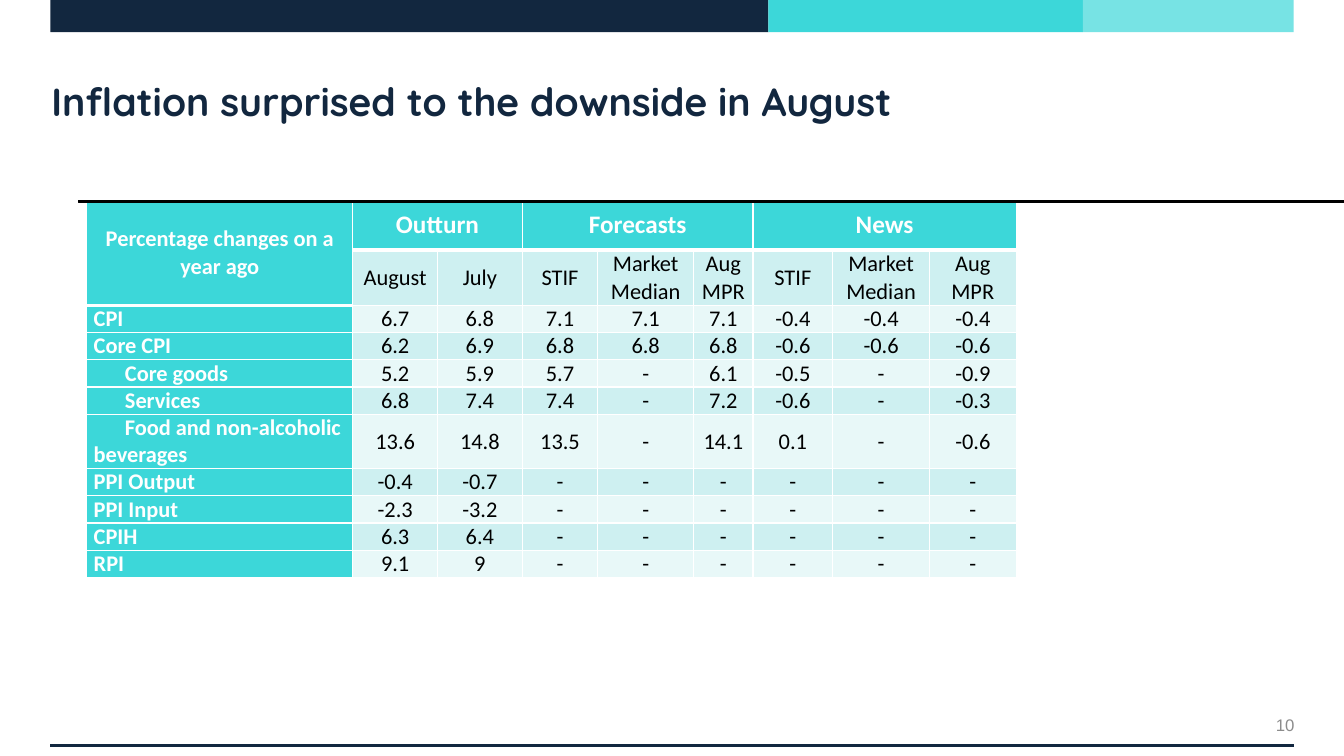
from lxml.etree import SubElement
from pptx import Presentation
from pptx.dml.color import RGBColor
from pptx.enum.shapes import MSO_CONNECTOR, MSO_SHAPE
from pptx.enum.text import MSO_ANCHOR, PP_ALIGN
from pptx.oxml import parse_xml
from pptx.oxml.ns import nsdecls, qn
from pptx.util import Inches, Pt

COLORS = {
    "navy": "12273F", "teal": "3CD7D9", "light_teal": "77E3E4",
    "band_dark": "CEF0F1", "band_light": "E8F8F8",
    "white": "FFFFFF", "black": "000000", "grey": "8C8C8C",
}
COLUMN_WIDTHS = [2.64, 0.84, 0.84, 0.75, 0.95, 0.59, 0.79, 0.96, 0.86]
GROUPS = [("Outturn", 1, 2), ("Forecasts", 3, 5), ("News", 6, 8)]
SUBHEADS = ["August", "July"] + ["STIF", "Market Median", "Aug MPR"] * 2
INDENTED = {"Core goods", "Services", "Food and non-alcoholic beverages"}
BOTTOM_ANCHORED = {"CPIH", "RPI"}
FIGURES = [
    ("CPI", "6.7 6.8 7.1 7.1 7.1 -0.4 -0.4 -0.4"),
    ("Core CPI", "6.2 6.9 6.8 6.8 6.8 -0.6 -0.6 -0.6"),
    ("Core goods", "5.2 5.9 5.7 - 6.1 -0.5 - -0.9"),
    ("Services", "6.8 7.4 7.4 - 7.2 -0.6 - -0.3"),
    ("Food and non-alcoholic beverages", "13.6 14.8 13.5 - 14.1 0.1 - -0.6"),
    ("PPI Output", "-0.4 -0.7 - - - - - -"),
    ("PPI Input", "-2.3 -3.2 - - - - - -"),
    ("CPIH", "6.3 6.4 - - - - - -"),
    ("RPI", "9.1 9 - - - - - -"),
]
ROW_HEIGHTS = [0.49, 0.55] + [0.54 if label.startswith("Food") else 0.27 for label, _ in FIGURES]


def rgb(name):
    return RGBColor.from_string(COLORS[name])


def add_run(paragraph, text, size, font, color, bold=False):
    run = paragraph.add_run()
    run.text = text
    run.font.size = Pt(size)
    run.font.name = font
    run.font.bold = bold
    run.font.color.rgb = rgb(color)


def add_bar(slide, left, top, width, height, color):
    bar = slide.shapes.add_shape(
        MSO_SHAPE.RECTANGLE, Inches(left), Inches(top), Inches(width), Inches(height))
    bar.shadow.inherit = False
    bar.fill.solid()
    bar.fill.fore_color.rgb = rgb(color)
    bar.line.fill.background()
    return bar


def add_text(slide, box, text, size, font, color, bold=False, align=PP_ALIGN.LEFT, margins=(0, 0, 0, 0)):
    text_box = slide.shapes.add_textbox(*map(Inches, box))
    frame = text_box.text_frame
    frame.word_wrap = True
    frame.vertical_anchor = MSO_ANCHOR.MIDDLE
    (frame.margin_left, frame.margin_top,
     frame.margin_right, frame.margin_bottom) = map(Inches, margins)
    paragraph = frame.paragraphs[0]
    paragraph.alignment = align
    add_run(paragraph, text, size, font, color, bold)


def add_header_band(slide, left, top, height):
    for width, color in [(7.12, "navy"), (3.12, "teal"), (2.09, "light_teal")]:
        add_bar(slide, left, top, width, height, color)
        left += width


def add_footer(slide, left, top, width):
    """Draw the closing line, with the page number above its right end."""
    line = slide.shapes.add_connector(
        MSO_CONNECTOR.STRAIGHT, Inches(left), Inches(top), Inches(left + width), Inches(top))
    line.line.color.rgb = rgb("navy")
    line.line.width = Pt(2.25)
    SubElement(line._element.spPr, qn("a:effectLst"))
    add_text(slide, (left + width - 1.16, top - 0.42, 1.17, 0.42), "10", 12, "Arial", "grey",
             align=PP_ALIGN.RIGHT, margins=(0.1, 0.05, 0, 0.05))


def set_borders(cell, top, bottom):
    """Give a cell white edges; top and bottom are widths in points."""
    properties = cell._tc.get_or_add_tcPr()
    for index, (side, width) in enumerate([("L", 1), ("R", 1), ("T", top), ("B", bottom)]):
        properties.insert(index, parse_xml(
            f'<a:ln{side} {nsdecls("a")} w="{Pt(width)}"><a:solidFill>'
            f'<a:srgbClr val="{COLORS["white"]}"/></a:solidFill></a:ln{side}>'))


def style_cell(cell, row, column):
    heading = row == 0 or column == 0
    band = "band_light" if row % 2 == 0 else "band_dark"
    cell.fill.solid()
    cell.fill.fore_color.rgb = rgb("teal" if heading else band)
    cell.margin_left = cell.margin_right = Inches(0.07)
    cell.margin_top = cell.margin_bottom = 0
    cell.vertical_anchor = MSO_ANCHOR.MIDDLE
    header_end = 1 if column == 0 else 0
    set_borders(cell, 3 if row == header_end + 1 else 1,
                3 if row == header_end or row == 0 else 1)


def fill_cell(cell, text, size=16, color="black", bold=False, align=PP_ALIGN.CENTER):
    paragraph = cell.text_frame.paragraphs[0]
    paragraph.alignment = align
    if text in INDENTED:
        paragraph._p.get_or_add_pPr().set("indent", str(Inches(0.31)))
    add_run(paragraph, text, size, "Calibri", color, bold)


def add_inflation_table(slide, left, top):
    table = slide.shapes.add_table(
        len(ROW_HEIGHTS), len(COLUMN_WIDTHS), Inches(left), Inches(top),
        Inches(sum(COLUMN_WIDTHS)), Inches(sum(ROW_HEIGHTS))).table
    for column, width in zip(table.columns, COLUMN_WIDTHS):
        column.width = Inches(width)
    for row, height in zip(table.rows, ROW_HEIGHTS):
        row.height = Inches(height)
    for row in range(len(ROW_HEIGHTS)):
        for column in range(len(COLUMN_WIDTHS)):
            style_cell(table.cell(row, column), row, column)

    table.cell(0, 0).merge(table.cell(1, 0))
    fill_cell(table.cell(0, 0), "Percentage changes on a year ago", color="white", bold=True)
    for name, first, last in GROUPS:
        table.cell(0, first).merge(table.cell(0, last))
        fill_cell(table.cell(0, first), name, 18, "white", True)
    for column, subhead in enumerate(SUBHEADS, 1):
        fill_cell(table.cell(1, column), subhead)

    for row, (label, values) in enumerate(FIGURES, 2):
        fill_cell(table.cell(row, 0), label, color="white", bold=True, align=PP_ALIGN.LEFT)
        if label in INDENTED:
            table.cell(row, 0).vertical_anchor = MSO_ANCHOR.BOTTOM
        for column, value in enumerate(values.split(), 1):
            fill_cell(table.cell(row, column), value)
            if label in BOTTOM_ANCHORED and column <= 2:
                table.cell(row, column).vertical_anchor = MSO_ANCHOR.BOTTOM


def add_table_rule(slide, left, top, width):
    rule = add_bar(slide, left, top, width, 0.02, "black")
    rule.line.color.rgb = rgb("black")
    rule.line.width = Pt(0.75)


def main():
    presentation = Presentation()
    presentation.slide_width = Inches(13.33)
    presentation.slide_height = Inches(7.5)
    slide = presentation.slides.add_slide(presentation.slide_layouts[6])
    add_header_band(slide, 0.5, 0, 0.32)
    add_footer(slide, 0.5, 7.4, 12.33)
    add_inflation_table(slide, 0.86, 1.99)
    add_text(slide, (0.51, 0.5, 12.33, 1), "Inflation surprised to the downside in August",
             28, "Quicksand", "navy", bold=True)
    add_table_rule(slide, 0.78, 1.99, 13.33)
    presentation.save("out.pptx")


if __name__ == "__main__":
    main()
